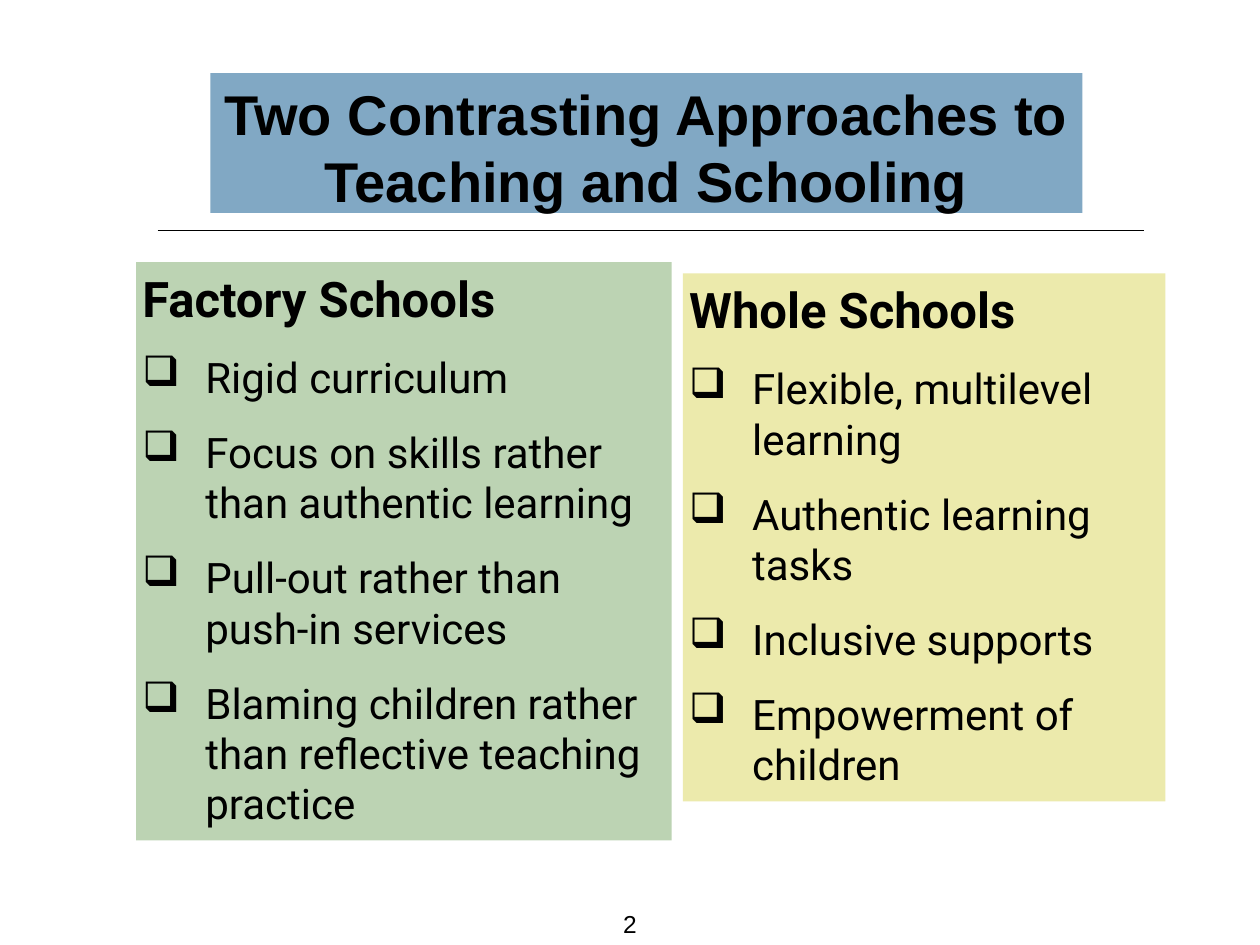
import pptx
import pptx.dml.color
import pptx.enum.shapes
import pptx.enum.text
import pptx.util
from lxml import etree
from pptx.oxml.ns import qn

Inches, Pt = pptx.util.Inches, pptx.util.Pt
RGBColor = pptx.dml.color.RGBColor
Align, Anchor = pptx.enum.text.PP_ALIGN, pptx.enum.text.MSO_ANCHOR

BLACK = RGBColor(0x00, 0x00, 0x00)
WHITE = RGBColor(0xFF, 0xFF, 0xFF)
BLUE = RGBColor(0x81, 0xA8, 0xC4)
GREEN = RGBColor(0xBC, 0xD3, 0xB3)
YELLOW = RGBColor(0xEC, 0xEA, 0xAC)


class SlideBuilder:
    heading_font = "Arial"
    body_font = "Roboto"
    inset = Inches(0.05)
    indent = Inches(0.5)
    bullet = "❑"

    def __init__(self, slide):
        self.slide = slide
        background = slide.background.fill
        background.solid()
        background.fore_color.rgb = WHITE

    def frame(self, shape, anchor=Anchor.TOP, wrap=True):
        frame = shape.text_frame
        frame.margin_left = frame.margin_right = self.inset
        frame.margin_top = frame.margin_bottom = self.inset
        frame.vertical_anchor = anchor
        frame.word_wrap = wrap
        frame.auto_size = pptx.enum.text.MSO_AUTO_SIZE.SHAPE_TO_FIT_TEXT
        return frame

    def run(self, paragraph, text, size, font, bold=False, align=Align.LEFT):
        paragraph.alignment = align
        run = paragraph.add_run()
        run.text = text
        run.font.size = Pt(size)
        run.font.name = font
        run.font.bold = bold
        run.font.color.rgb = BLACK

    def panel(self, left, top, width, height, color):
        panel = self.slide.shapes.add_shape(
            pptx.enum.shapes.MSO_SHAPE.RECTANGLE,
            Inches(left), Inches(top), Inches(width), Inches(height))
        panel.shadow.inherit = False
        panel.fill.solid()
        panel.fill.fore_color.rgb = color
        panel.line.fill.background()
        return self.frame(panel)

    def title(self, text, left, top, width, height):
        frame = self.panel(left, top, width, height, BLUE)
        self.run(frame.paragraphs[0], text, 32, self.heading_font, True, Align.CENTER)

    def approach(self, heading, points, left, top, width, height, color):
        frame = self.panel(left, top, width, height, color)
        self.run(frame.paragraphs[0], heading, 28, self.body_font, True)
        for point in points:
            paragraph = frame.add_paragraph()
            properties = paragraph._p.get_or_add_pPr()
            properties.set("marL", str(self.indent))
            properties.set("indent", str(-self.indent))
            etree.SubElement(properties, qn("a:buChar")).set("char", self.bullet)
            paragraph.space_before = Pt(14)
            self.run(paragraph, point, 24, self.body_font)

    def rule(self, left, right, y):
        rule = self.slide.shapes.add_connector(
            pptx.enum.shapes.MSO_CONNECTOR.STRAIGHT,
            Inches(left), Inches(y), Inches(right), Inches(y))
        rule.line.color.rgb = BLACK
        rule.line.width = Pt(0.75)
        etree.SubElement(rule._element.spPr, qn("a:effectLst"))

    def page_number(self, text, left, top, width, height):
        box = self.slide.shapes.add_textbox(
            Inches(left), Inches(top), Inches(width), Inches(height))
        frame = self.frame(box, Anchor.BOTTOM, wrap=False)
        self.run(frame.paragraphs[0], text, 14, self.heading_font, align=Align.CENTER)


def main():
    deck = pptx.Presentation()
    deck.slide_width, deck.slide_height = Inches(10), Inches(7.5)
    builder = SlideBuilder(deck.slides.add_slide(deck.slide_layouts[6]))

    # Page number
    builder.page_number("2", 4.89, 7.16, 0.22, 0.34)

    # Title
    builder.title("Two Contrasting Approaches to Teaching and Schooling",
                  1.67, 0.58, 6.92, 1.11)

    # The two approaches
    builder.approach(
        "Factory Schools",
        ["Rigid curriculum",
         "Focus on skills rather than authentic learning",
         "Pull-out rather than push-in services",
         "Blaming children rather than reflective teaching practice"],
        1.08, 2.08, 4.25, 4.59, GREEN)
    builder.approach(
        "Whole Schools",
        ["Flexible, multilevel learning",
         "Authentic learning tasks",
         "Inclusive supports",
         "Empowerment of children"],
        5.42, 2.17, 3.83, 4.19, YELLOW)

    # Rule under the title
    builder.rule(1.25, 9.08, 1.83)

    deck.save("out.pptx")


if __name__ == "__main__":
    main()
